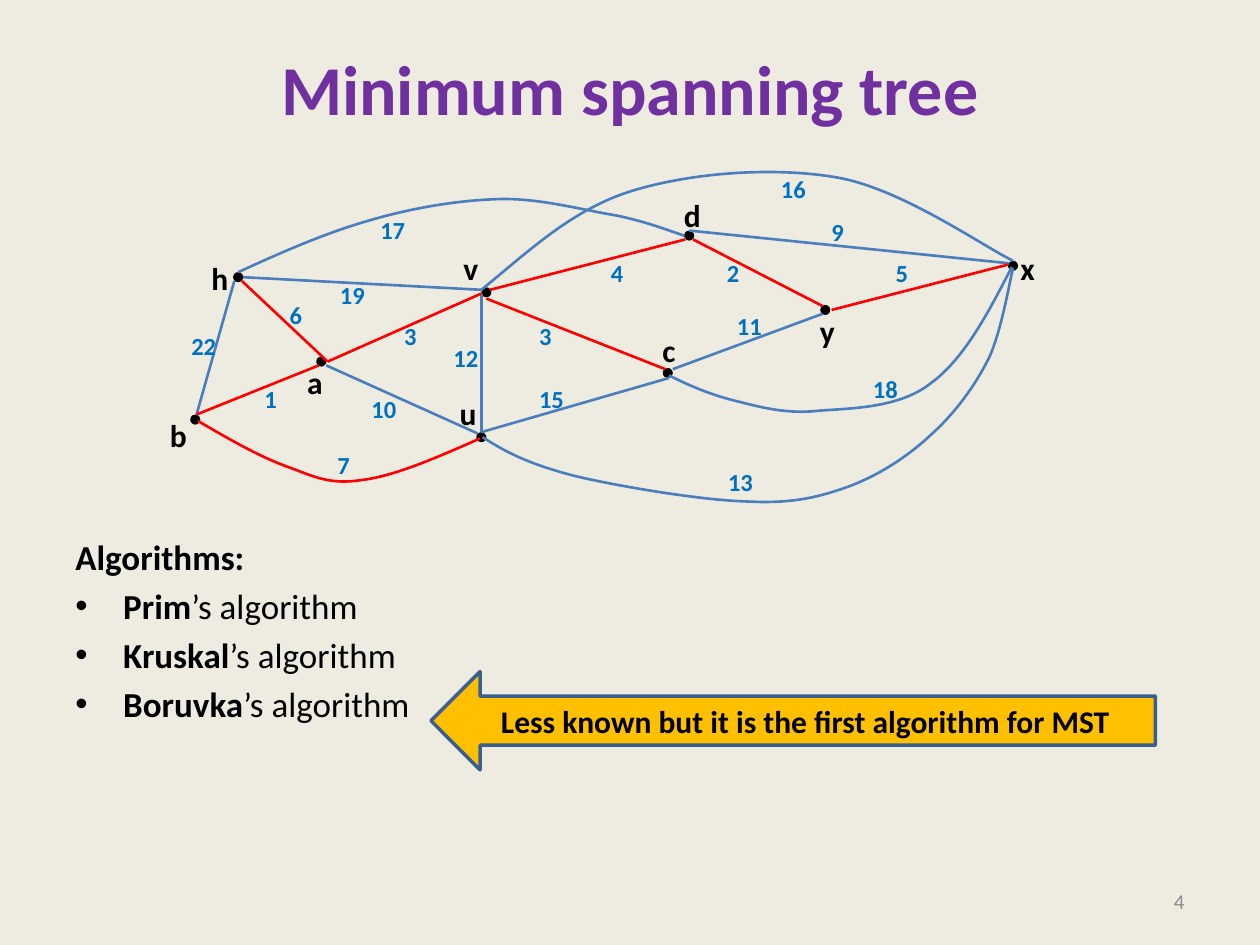
from pptx import Presentation
from pptx.dml.color import RGBColor
from pptx.enum.shapes import MSO_CONNECTOR, MSO_SHAPE
from pptx.enum.text import MSO_ANCHOR, PP_ALIGN
from pptx.oxml.ns import qn
from pptx.util import Inches, Pt
from lxml.etree import SubElement

BACKGROUND = RGBColor(0xEE, 0xEC, 0xE1)
PURPLE = RGBColor(0x70, 0x30, 0xA0)
BLACK = RGBColor(0, 0, 0)
GRAY = RGBColor(0x8C, 0x8C, 0x8C)
EDGE_BLUE = RGBColor(0x4B, 0x7E, 0xBC)
TREE_RED = RGBColor(0xFF, 0, 0)
WEIGHT_BLUE = RGBColor(0, 0x70, 0xC0)
GOLD = RGBColor(0xFF, 0xC0, 0)
ARROW_BORDER = RGBColor(0x3A, 0x5F, 0x8C)

DOT = 0.08

NODES = [
    ("h", (1.85, 2.16), (1.58, 2.01)),
    ("b", (1.51, 3.29), (1.25, 3.25)),
    ("c", (5.26, 2.92), (5.16, 2.58)),
    ("d", (5.43, 1.83), (5.33, 1.51)),
    ("u", (3.78, 3.43), (3.55, 3.08)),
    ("y", (6.51, 2.42), (6.41, 2.43)),
    ("v", (3.82, 2.28), (3.58, 1.93)),
    ("a", (2.51, 2.83), (2.34, 2.83)),
    ("x", (8, 2.07), (8, 1.93)),
]

OTHER_EDGES = [
    ((2.59, 2.9), (3.79, 3.44)),
    ((3.82, 2.33), (3.82, 3.43)),
    ((3.82, 3.43), (5.31, 3)),
    ((5.34, 2.93), (6.53, 2.49)),
    ((1.86, 2.23), (1.56, 3.29)),
    ((8.01, 2.09), (5.47, 1.83)),
    ((1.93, 2.2), (3.82, 2.3)),
]

TREE_EDGES = [
    ((5.44, 1.9), (3.89, 2.3)),
    ((1.92, 2.23), (2.6, 2.87)),
    ((1.56, 3.29), (2.53, 2.9)),
    ((2.6, 2.87), (3.82, 2.33)),
    ((5.28, 2.93), (3.86, 2.37)),
    ((6.53, 2.43), (5.5, 1.9)),
    ((8, 2.1), (6.6, 2.46)),
]

OTHER_CURVES = [
    [(5.31, 2.98), (5.47, 3.06), (5.63, 3.13), (5.83, 3.18), (6.03, 3.23),
     (6.24, 3.29), (6.5, 3.26), (6.76, 3.24), (7.14, 3.24), (7.39, 3.04),
     (7.65, 2.85), (7.84, 2.49), (8.03, 2.12)],
    [(3.83, 3.47), (4.03, 3.6), (4.22, 3.69), (4.57, 3.78), (4.91, 3.86),
     (5.56, 3.97), (5.92, 3.98), (6.28, 4), (6.49, 3.95), (6.74, 3.86),
     (6.98, 3.77), (7.21, 3.62), (7.39, 3.45), (7.58, 3.28), (7.74, 3.06),
     (7.85, 2.84), (7.95, 2.62), (8.01, 2.25), (8.04, 2.13)],
    [(1.89, 2.16), (2.24, 2), (2.58, 1.85), (2.93, 1.75), (3.27, 1.65),
     (3.63, 1.59), (3.96, 1.58), (4.28, 1.57), (4.64, 1.67), (4.89, 1.71),
     (5.13, 1.76), (5.28, 1.82), (5.43, 1.87)],
    [(3.82, 2.3), (4.19, 2), (4.53, 1.67), (5, 1.52), (5.48, 1.37),
     (6.14, 1.32), (6.65, 1.41), (7.16, 1.5), (7.81, 1.96), (8.04, 2.07)],
]

TREE_CURVES = [
    [(1.57, 3.34), (1.81, 3.48), (2.05, 3.62), (2.27, 3.7), (2.49, 3.78),
     (2.61, 3.85), (2.87, 3.81), (3.13, 3.78), (3.47, 3.63), (3.81, 3.48)],
]

WEIGHTS = [
    ("18", 6.83, 2.92), ("7", 2.58, 3.52), ("1", 2, 3), ("19", 2.6, 2.17),
    ("22", 1.42, 2.58), ("10", 2.85, 3.08), ("3", 3.11, 2.5),
    ("12", 3.5, 2.67), ("3", 4.18, 2.5), ("15", 4.18, 3),
    ("11", 5.75, 2.42), ("5", 7.01, 2), ("16", 6.1, 1.33),
    ("17", 2.92, 1.66), ("13", 5.68, 3.66), ("4", 4.75, 2),
    ("2", 5.67, 2), ("9", 6.5, 1.67), ("6", 2.2, 2.33),
]


def add_run(p, text, size=18, color=BLACK, bold=True):
    """Append a formatted run to a paragraph."""
    r = p.add_run()
    r.text = text
    r.font.name = "Calibri"
    r.font.size = Pt(size)
    r.font.bold = bold
    r.font.color.rgb = color


def add_text(s, text, x, y, w, h, align=PP_ALIGN.LEFT, anchor=MSO_ANCHOR.TOP,
             wrap=True, **font):
    """Add a text box with one paragraph and return its text frame."""
    tf = s.shapes.add_textbox(Inches(x), Inches(y), Inches(w), Inches(h)).text_frame
    tf.word_wrap = wrap
    tf.vertical_anchor = anchor
    p = tf.paragraphs[0]
    p.alignment = align
    add_run(p, text, **font)
    return tf


def add_shape(s, kind, x, y, w, h, fill):
    """Add a filled preset shape without shadow or outline."""
    sp = s.shapes.add_shape(kind, Inches(x), Inches(y), Inches(w), Inches(h))
    sp.shadow.inherit = False
    sp.fill.solid()
    sp.fill.fore_color.rgb = fill
    sp.line.fill.background()
    return sp


def style_line(sp, color, width=1.5):
    """Set the colour and width of an outline."""
    sp.line.color.rgb = color
    sp.line.width = Pt(width)


def add_edge(s, start, end, color):
    """Draw a straight graph edge."""
    sp = s.shapes.add_connector(MSO_CONNECTOR.STRAIGHT,
                                *(Inches(v) for v in (*start, *end)))
    style_line(sp, color)
    SubElement(sp.element.spPr, qn("a:effectLst"))


def add_curve(s, points, color):
    """Draw a curved graph edge whose points chain cubic Bezier segments."""
    start, *rest = [(Inches(x), Inches(y)) for x, y in points]
    builder = s.shapes.build_freeform(*start)
    builder.add_line_segments(rest, close=False)
    sp = builder.convert_to_shape()
    lines = list(sp.element.iter(qn("a:lnTo")))
    for i in range(0, len(lines), 3):
        segment = lines[i]
        segment.tag = qn("a:cubicBezTo")
        for line in lines[i + 1:i + 3]:
            segment.append(line[0])
            line.getparent().remove(line)
    sp.shadow.inherit = False
    sp.fill.background()
    style_line(sp, color)


def add_bullet(tf, name):
    """Add a bulleted algorithm with its author's name in bold."""
    p = tf.add_paragraph()
    p.space_before = Pt(4)
    pPr = p._p.get_or_add_pPr()
    pPr.set("marL", str(Inches(0.38)))
    pPr.set("indent", str(-Inches(0.38)))
    SubElement(pPr, qn("a:buFont"), typeface="Arial")
    SubElement(pPr, qn("a:buChar"), char="•")
    add_run(p, name, size=20)
    add_run(p, "’s algorithm", size=20, bold=False)


def add_graph(s):
    """Draw the weighted graph with its spanning tree highlighted."""
    for _, dot, _ in NODES:
        add_shape(s, MSO_SHAPE.OVAL, *dot, DOT, DOT, BLACK)
    for color, edges, curves in ((EDGE_BLUE, OTHER_EDGES, OTHER_CURVES),
                                 (TREE_RED, TREE_EDGES, TREE_CURVES)):
        for start, end in edges:
            add_edge(s, start, end, color)
        for points in curves:
            add_curve(s, points, color)
    for name, _, label in NODES:
        add_text(s, name, *label, 0.33, 0.4, wrap=False)
    for weight, x, y in WEIGHTS:
        add_text(s, weight, x, y, 0.2 + 0.1 * len(weight), 0.34, wrap=False,
                 size=14, color=WEIGHT_BLUE)


def main():
    """Build the slide and save it."""
    prs = Presentation()
    prs.slide_width, prs.slide_height = Inches(10), Inches(7.5)
    s = prs.slides.add_slide(prs.slide_layouts[6])
    s.background.fill.solid()
    s.background.fill.fore_color.rgb = BACKGROUND

    title = add_text(s, "Minimum spanning tree", 0.5, 0.3, 9, 1.25, size=40,
                     color=PURPLE, align=PP_ALIGN.CENTER, anchor=MSO_ANCHOR.MIDDLE)
    title.margin_bottom = Inches(0.51)
    body = add_text(s, "Algorithms:", 0.5, 1.75, 9, 4.95, size=20)
    body.margin_top = Inches(2.5)
    for name in ("Prim", "Kruskal", "Boruvka"):
        add_bullet(body, name)
    add_text(s, "4", 7.17, 6.95, 2.33, 0.4, size=12, color=GRAY, bold=False,
             align=PP_ALIGN.RIGHT, anchor=MSO_ANCHOR.MIDDLE)

    add_graph(s)
    arrow = add_shape(s, MSO_SHAPE.LEFT_ARROW, 3.42, 5.33, 5.75, 0.78, GOLD)
    style_line(arrow, ARROW_BORDER, 2)
    arrow.text_frame.vertical_anchor = MSO_ANCHOR.MIDDLE
    p = arrow.text_frame.paragraphs[0]
    p.alignment = PP_ALIGN.CENTER
    add_run(p, "Less known but it is the first algorithm for MST")
    prs.save("out.pptx")


if __name__ == "__main__":
    main()
